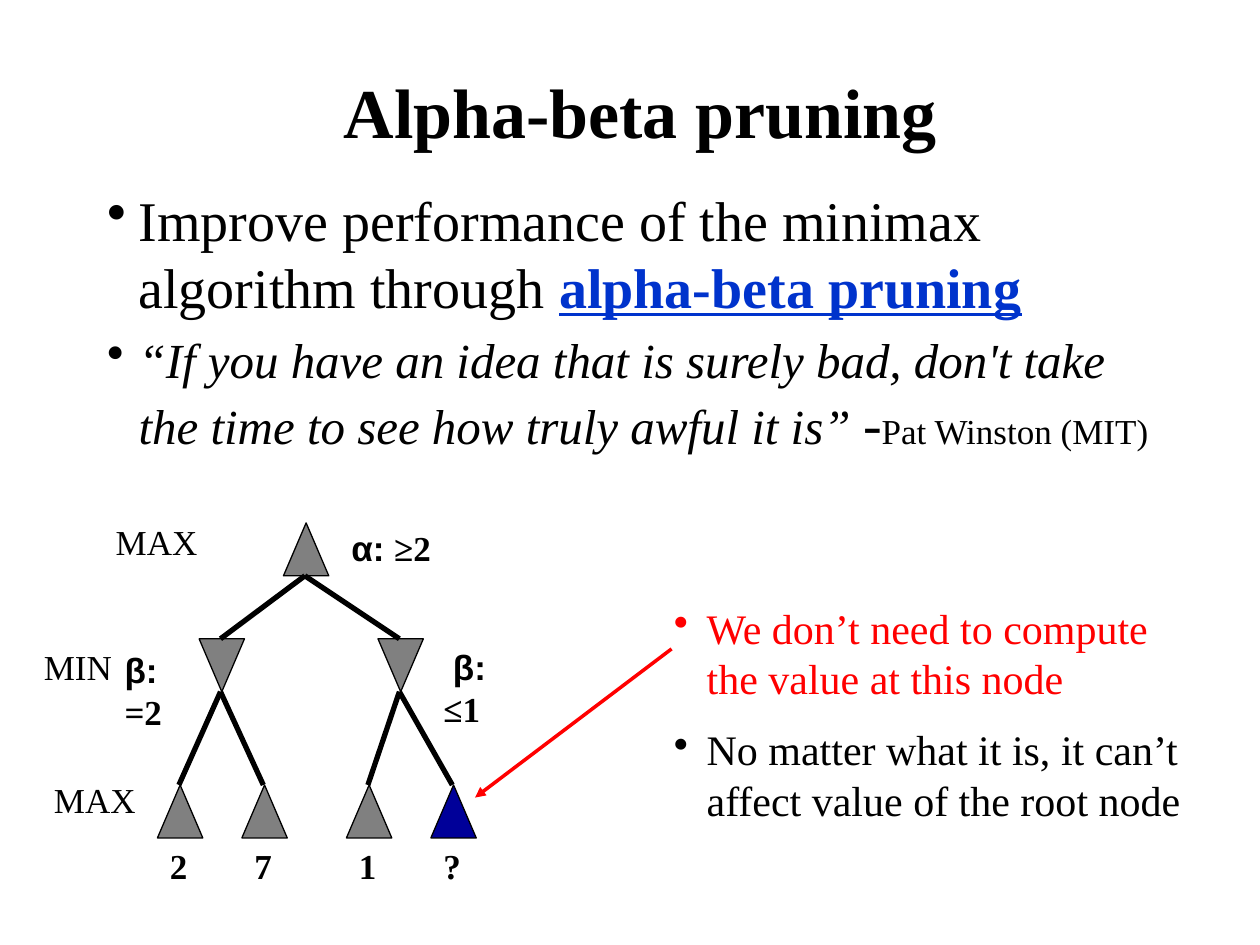
from dataclasses import dataclass

from lxml.etree import SubElement
from pptx import Presentation
from pptx.dml.color import RGBColor
from pptx.enum.shapes import MSO_CONNECTOR, MSO_SHAPE
from pptx.enum.text import MSO_ANCHOR, MSO_AUTO_SIZE, PP_ALIGN
from pptx.oxml.ns import qn
from pptx.util import Inches, Pt

COLORS = {"black": "000000", "gray": "808080", "navy": "000099",
          "blue": "0033CC", "red": "FF0000"}
SERIF, SANS = "Times New Roman", "Arial"
WIDE, HIGH, MID = 0.36, 0.42, 0.17  # triangle size and edge offset


@dataclass
class Run:
    text: str
    size: float = 20
    font: str = SERIF
    color: str = "black"
    bold: bool = False
    italic: bool = False
    under: bool = False


@dataclass
class Node:
    x: float
    y: float
    up: bool = True
    root: "Node | None" = None
    fill: str = "gray"
    mark: str = ""


@dataclass
class Label:
    x: float
    y: float
    wide: float
    runs: list[Run]
    wrap: bool = False


def tint(name: str) -> RGBColor:
    return RGBColor.from_string(COLORS[name])


def write(para, runs: list[Run]) -> None:
    for item in runs:
        run = para.add_run()
        run.text = item.text
        font = run.font
        font.size, font.name = Pt(item.size), item.font
        font.bold, font.italic, font.underline = item.bold, item.italic, item.under
        font.color.rgb = tint(item.color)


def write_list(frame, items: list[list[Run]], indent: float, gaps: list[float]) -> None:
    for i, (runs, gap) in enumerate(zip(items, gaps)):
        para = frame.add_paragraph() if i else frame.paragraphs[0]
        para.space_before = Pt(gap)
        props = para._p.get_or_add_pPr()
        props.set("marL", str(Inches(indent)))
        props.set("indent", str(-Inches(indent)))
        SubElement(props, qn("a:buFontTx"))
        SubElement(props, qn("a:buChar")).set("char", "•")
        write(para, runs)


def place(shape, x: float, y: float, wide: float, high: float) -> None:
    shape.left, shape.top = Inches(x), Inches(y)
    shape.width, shape.height = Inches(wide), Inches(high)


def draw_line(slide, start: tuple[float, float], end: tuple[float, float],
              color: str, width: float, arrow: bool = False) -> None:
    line = slide.shapes.add_connector(
        MSO_CONNECTOR.STRAIGHT, *(Inches(v) for v in (*start, *end)))
    line.line.color.rgb = tint(color)
    line.line.width = Pt(width)
    if arrow:
        SubElement(line.line._get_or_add_ln(), qn("a:tailEnd")).set("type", "triangle")
    SubElement(line._element.spPr, qn("a:effectLst"))


def draw_node(slide, node: Node) -> None:
    shape = slide.shapes.add_shape(
        MSO_SHAPE.ISOSCELES_TRIANGLE,
        *(Inches(v) for v in (node.x, node.y, WIDE, HIGH)))
    shape.rotation = 0 if node.up else 180
    shape.shadow.inherit = False
    shape.fill.solid()
    shape.fill.fore_color.rgb = tint(node.fill)
    shape.line.color.rgb = tint("black")
    shape.line.width = Pt(0.75)


def draw_label(slide, label: Label) -> None:
    box = slide.shapes.add_textbox(
        *(Inches(v) for v in (label.x, label.y, label.wide, 0.43)))
    box.text_frame.word_wrap = label.wrap
    write(box.text_frame.paragraphs[0], label.runs)


def main() -> None:
    deck = Presentation()
    deck.slide_width, deck.slide_height = Inches(10), Inches(7.5)
    slide = deck.slides.add_slide(deck.slide_layouts[1])

    # Title and main points
    title, body = slide.placeholders
    place(title, 0.83, 0.25, 8.5, 1.25)
    frame = title.text_frame
    frame.vertical_anchor = MSO_ANCHOR.MIDDLE
    frame.paragraphs[0].alignment = PP_ALIGN.CENTER
    write(frame.paragraphs[0], [Run("Alpha-beta pruning", 40, bold=True)])

    place(body, 0.75, 1.42, 8.5, 4.5)
    body.text_frame.auto_size = MSO_AUTO_SIZE.NONE
    write_list(body.text_frame, [
        [Run("Improve performance of the minimax algorithm through ", 32),
         Run("alpha-beta pruning", 32, color="blue", bold=True, under=True)],
        [Run("“If you have an idea that is surely bad, don't take the time "
             "to see how truly awful it is” ", 28, italic=True),
         Run("-", 32), Run("Pat Winston (MIT)", 20)],
    ], 0.25, [6.4, 5.6])

    # Game tree
    top = Node(2.25, 4.15)
    left, right = (Node(x, 5.07, False, top) for x in (1.58, 3))
    leaves = [Node(1.25, 6.23, root=left, mark="2"),
              Node(1.92, 6.23, root=left, mark="7"),
              Node(2.75, 6.23, root=right, mark="1"),
              Node(3.42, 6.23, root=right, fill="navy", mark="?")]
    nodes = [top, left, right, *leaves]
    for node in nodes:
        draw_node(slide, node)
    for node in nodes:
        if node.root:
            draw_line(slide, (node.x + MID, node.y),
                      (node.root.x + MID, node.root.y + HIGH), "black", 3)

    # Leaf values, bounds and level names
    labels = [Label(leaf.x, 6.65, 0.34, [Run(leaf.mark, bold=True)])
              for leaf in leaves]
    labels += [
        Label(0.89, 5.1, 0.8,
              [Run("β: ", font=SANS, bold=True), Run("=2", bold=True)], True),
        Label(2.62, 4.13, 0.96,
              [Run(" ", bold=True), Run("α: ", font=SANS, bold=True),
               Run("≥2", bold=True)]),
        Label(3.42, 5.07, 0.87,
              [Run(" β: ", font=SANS, bold=True), Run("≤1", bold=True)], True),
        Label(0.82, 4.08, 0.85, [Run("MAX")]),
        Label(0.33, 6.13, 0.85, [Run("MAX")]),
        Label(0.25, 5.07, 0.74, [Run("MIN")]),
    ]
    for label in labels:
        draw_label(slide, label)

    # Remark on the pruned leaf
    note = slide.shapes.add_textbox(
        *(Inches(v) for v in (5.25, 4.73, 4.42, 1.92)))
    note.text_frame.word_wrap = True
    write_list(note.text_frame, [
        [Run("We don’t need to compute the value at this node", 24, color="red")],
        [Run("No matter what it is, it can’t affect value of the root node", 24)],
    ], 0.26, [12, 12])
    draw_line(slide, (5.33, 5.15), (3.77, 6.33), "red", 2, True)

    deck.save("out.pptx")


if __name__ == "__main__":
    main()
